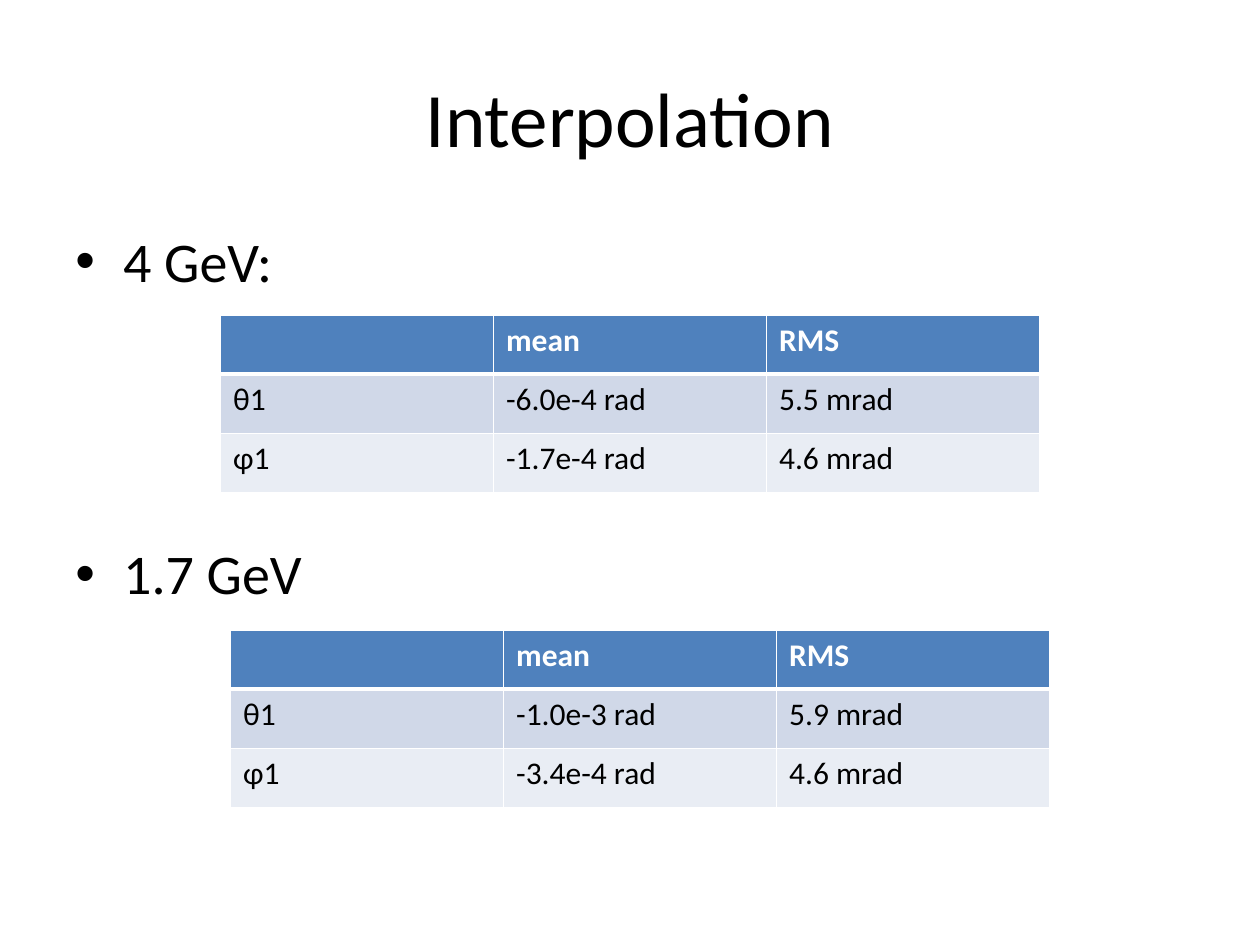
from dataclasses import dataclass

from lxml import etree
from pptx import Presentation
from pptx.dml.color import RGBColor
from pptx.enum import text
from pptx.oxml import ns
from pptx.util import Inches, Pt

COLORS = {
    "text": "000000",
    "white": "FFFFFF",
    "header": "4F81BD",
    "band_dark": "D0D8E8",
    "band_light": "E9EDF4",
}
FONT = "Calibri"
COL_WIDTH, ROW_HEIGHT = 6.5 / 3, 0.47
HEADINGS = ("", "mean", "RMS")


@dataclass
class ResultTable:
    left: float
    top: float
    rows: tuple


RESULTS = [
    ResultTable(1.75, 2.5, (("θ1", "-6.0e-4 rad", "5.5 mrad"),
                            ("φ1", "-1.7e-4 rad", "4.6 mrad"))),
    ResultTable(1.83, 5, (("θ1", "-1.0e-3 rad", "5.9 mrad"),
                          ("φ1", "-3.4e-4 rad", "4.6 mrad"))),
]


def place(sp, left: float, top: float, width: float, height: float) -> None:
    box = {"left": left, "top": top, "width": width, "height": height}
    for name, value in box.items():
        setattr(sp, name, Inches(value))


def write(p, words: str, size: float, color: str = "text", bold: bool = False) -> None:
    r = p.add_run()
    r.text = words
    for name, value in {"name": FONT, "size": Pt(size), "bold": bold}.items():
        setattr(r.font, name, value)
    r.font.color.rgb = RGBColor.from_string(COLORS[color])


def add_bullet(p, indent: float) -> None:
    pPr = p._p.get_or_add_pPr()
    pPr.set("marL", str(Inches(indent)))
    pPr.set("indent", str(-Inches(indent)))
    etree.SubElement(pPr, ns.qn("a:buFont"), typeface="Arial")
    etree.SubElement(pPr, ns.qn("a:buChar"), char="•")


def add_borders(cell, widths: dict) -> None:
    tcPr = cell._tc.get_or_add_tcPr()
    for side in ("L", "R", "T", "B"):
        ln = etree.SubElement(tcPr, ns.qn(f"a:ln{side}"), w=str(Pt(widths.get(side, 1))))
        fill = etree.SubElement(ln, ns.qn("a:solidFill"))
        etree.SubElement(fill, ns.qn("a:srgbClr"), val=COLORS["white"])


def add_result_table(slide, result: ResultTable) -> None:
    rows = (HEADINGS, *result.rows)
    frame = slide.shapes.add_table(
        len(rows), len(HEADINGS), Inches(result.left), Inches(result.top),
        Inches(COL_WIDTH * len(HEADINGS)), Inches(ROW_HEIGHT * len(rows)))
    fills = ("header", "band_dark", "band_light")
    for i, (values, fill) in enumerate(zip(rows, fills)):
        header = i == 0
        # The thick rule belongs to both rows that share it
        widths = {0: {"B": 3}, 1: {"T": 3}}.get(i, {})
        for j, value in enumerate(values):
            cell = frame.table.cell(i, j)
            add_borders(cell, widths)
            cell.fill.solid()
            cell.fill.fore_color.rgb = RGBColor.from_string(COLORS[fill])
            if value:
                write(cell.text_frame.paragraphs[0], value, 18,
                      "white" if header else "text", header)


def main() -> None:
    prs = Presentation()
    prs.slide_width, prs.slide_height = Inches(10), Inches(7.5)
    slide = prs.slides.add_slide(prs.slide_layouts[5])

    # Title
    title = slide.shapes.title
    place(title, 0.5, 0.3, 9, 1.25)
    title.text_frame.vertical_anchor = text.MSO_ANCHOR.MIDDLE
    p = title.text_frame.paragraphs[0]
    p.alignment = text.PP_ALIGN.CENTER
    write(p, "Interpolation", 44)

    # Beam energies, spaced to leave room for the first table
    body = slide.shapes.add_textbox(Inches(0.5), Inches(1.75), Inches(9), Inches(4.95))
    tf = body.text_frame
    tf.word_wrap = True
    energies = (tf.paragraphs[0], "4 GeV:", 0), (tf.add_paragraph(), "1.7 GeV", 140)
    for p, words, space in energies:
        p.space_before = Pt(space)
        add_bullet(p, 0.38)
        write(p, words, 32)

    # Result tables
    for result in RESULTS:
        add_result_table(slide, result)

    prs.save("out.pptx")


if __name__ == "__main__":
    main()
